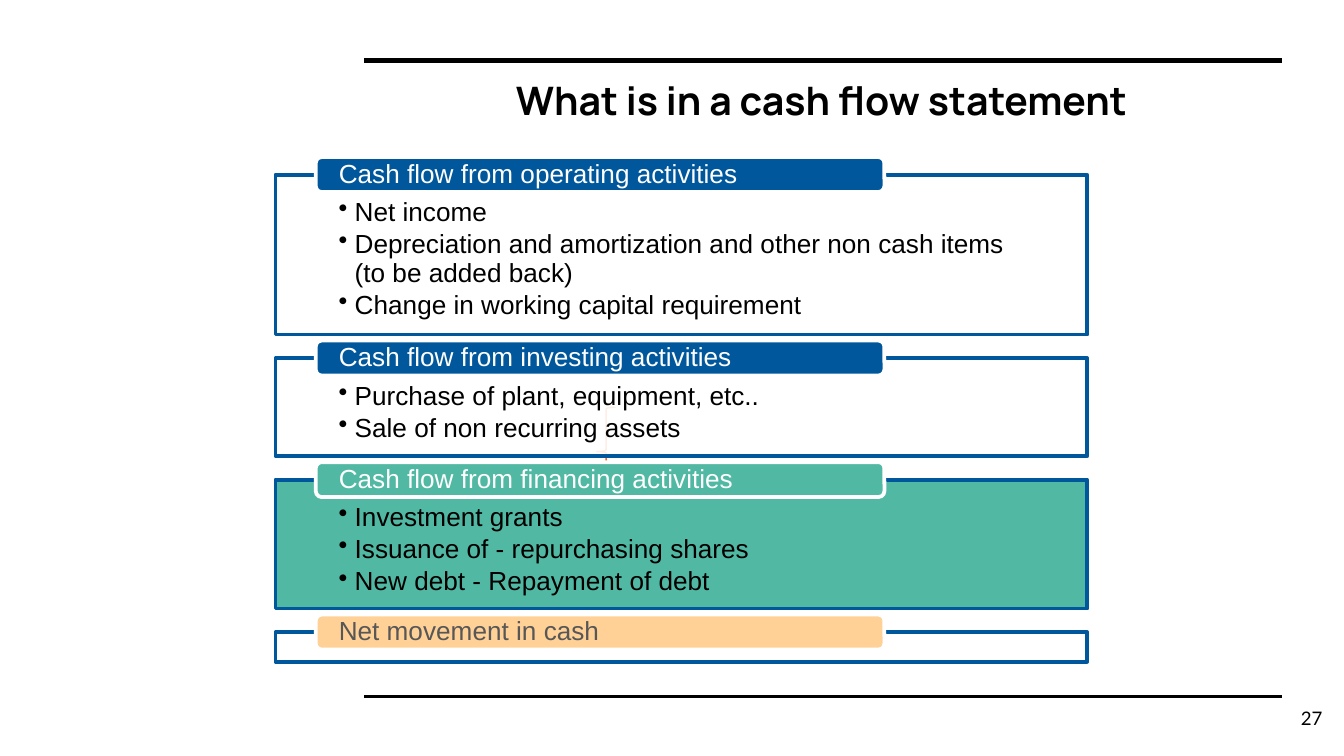
from lxml import etree
from pptx import Presentation
from pptx.dml.color import RGBColor
from pptx.enum import shapes, text
from pptx.oxml import ns
from pptx.util import Pt

# Content
TITLE = "What is in a cash flow statement"
PAGE = "27"
COLORS = {"blue": "00579B", "green": "51B9A3", "sand": "FFD197", "grey": "575757",
          "white": "FFFFFF", "black": "000000", "orange": "F46524"}
# heading, tab fill, heading colour, panel fill, panel opacity %, panel height, items
SECTIONS = [
    ("Cash flow from operating activities", "blue", "white", "white", 89, 85.7,
     ["Net income",
      "Depreciation and amortization and other non cash items (to be added back)",
      "Change in working capital requirement"]),
    ("Cash flow from investing activities", "blue", "white", "white", 89, 52.5,
     ["Purchase of plant, equipment, etc..", "Sale of non recurring assets"]),
    ("Cash flow from financing activities", "green", "white", "green", 100, 69.1,
     ["Investment grants", "Issuance of - repurchasing shares",
      "New debt - Repayment of debt"]),
    ("Net movement in cash", "sand", "grey", "white", 89, 15.8, []),
]
RULES = [(32.4, 3), (373, 1.5)]  # y, weight

# Layout, in points
PANEL_LEFT, PANEL_TOP, PANEL_WIDTH, PANEL_GAP = 147.6, 93.6, 434.9, 12.6
TAB_LEFT, TAB_WIDTH, TAB_HEIGHT, TAB_RISE = 169.2, 304.6, 18.7, 9.4

deck = Presentation()
deck.slide_width, deck.slide_height = Pt(720), Pt(405)
slide = deck.slides.add_slide(deck.slide_layouts[6])


def color(name):
    return RGBColor.from_string(COLORS[name])


def write(shape, lines, size=14, font="Arial", ink="black", bold=False, insets=(0, 0, 0, 0),
          anchor=text.MSO_ANCHOR.TOP, align=text.PP_ALIGN.LEFT, spacing=1.0, bullets=False):
    frame = shape.text_frame
    frame.word_wrap = True
    frame.vertical_anchor = anchor
    (frame.margin_left, frame.margin_top,
     frame.margin_right, frame.margin_bottom) = map(Pt, insets)
    for i, line in enumerate(lines):
        paragraph = frame.add_paragraph() if i else frame.paragraphs[0]
        paragraph.alignment = align
        paragraph.line_spacing = spacing
        if bullets:
            paragraph.space_before = Pt(2.1 if i else 0)
            props = paragraph._p.get_or_add_pPr()
            props.set("marL", str(Pt(8.64)))
            props.set("indent", str(-Pt(8.64)))
            etree.SubElement(props, ns.qn("a:buChar")).set("char", "•")
        run = paragraph.add_run()
        run.text = line
        run.font.size, run.font.name, run.font.bold = Pt(size), font, bold
        run.font.color.rgb = color(ink)


def add_block(kind, box, fill, line, weight, opacity=100):
    block = slide.shapes.add_shape(kind, *map(Pt, box))
    block.shadow.inherit = False
    block.line.color.rgb = color(line)
    block.line.width = Pt(weight)
    if fill is None:
        block.fill.background()
        return block
    block.fill.solid()
    block.fill.fore_color.rgb = color(fill)
    if opacity < 100:
        tint = block.fill._xPr.find(".//" + ns.qn("a:srgbClr"))
        etree.SubElement(tint, ns.qn("a:alpha")).set("val", str(opacity * 1000))
    return block


# Title
title = slide.shapes.add_textbox(Pt(269.3), Pt(33.8), Pt(424), Pt(50.4))
write(title, [TITLE], size=21, font="Manrope", bold=True, insets=(7.2, 7.2, 7.2, 7.2))

# Brace behind the panels
brace = add_block(shapes.MSO_SHAPE.LEFT_BRACE, (319.7, 218.2, 10.1, 47.5), None, "orange", 0.75)

# Sections: a panel with a heading tab across its top edge
top = PANEL_TOP
for heading, tab_fill, ink, panel_fill, opacity, height, items in SECTIONS:
    panel = add_block(shapes.MSO_SHAPE.RECTANGLE, (PANEL_LEFT, top, PANEL_WIDTH, height),
                      panel_fill, "blue", 2, opacity)
    write(panel, items, insets=(33.8, 13, 33.8, 7.9), spacing=0.9, bullets=True)
    tab = add_block(shapes.MSO_SHAPE.ROUNDED_RECTANGLE,
                    (TAB_LEFT, top - TAB_RISE, TAB_WIDTH, TAB_HEIGHT), tab_fill, "white", 2)
    write(tab, [heading], ink=ink, insets=(11.4, 0, 11.4, 0),
          anchor=text.MSO_ANCHOR.MIDDLE, spacing=0.9)
    top += height + PANEL_GAP

# Rules above and below
for y, weight in RULES:
    rule = slide.shapes.add_connector(shapes.MSO_CONNECTOR.STRAIGHT,
                                      Pt(195.1), Pt(y), Pt(686.9), Pt(y))
    rule.line.color.rgb = color("black")
    rule.line.width = Pt(weight)
    etree.SubElement(rule._element.spPr, ns.qn("a:effectLst"))

# Page number
page = slide.shapes.add_textbox(Pt(683.3), Pt(375.8), Pt(31), Pt(29))
write(page, [PAGE], size=10, font="Lato", insets=(5.8, 2.9, 5.8, 2.9),
      align=text.PP_ALIGN.RIGHT)

deck.save("out.pptx")
